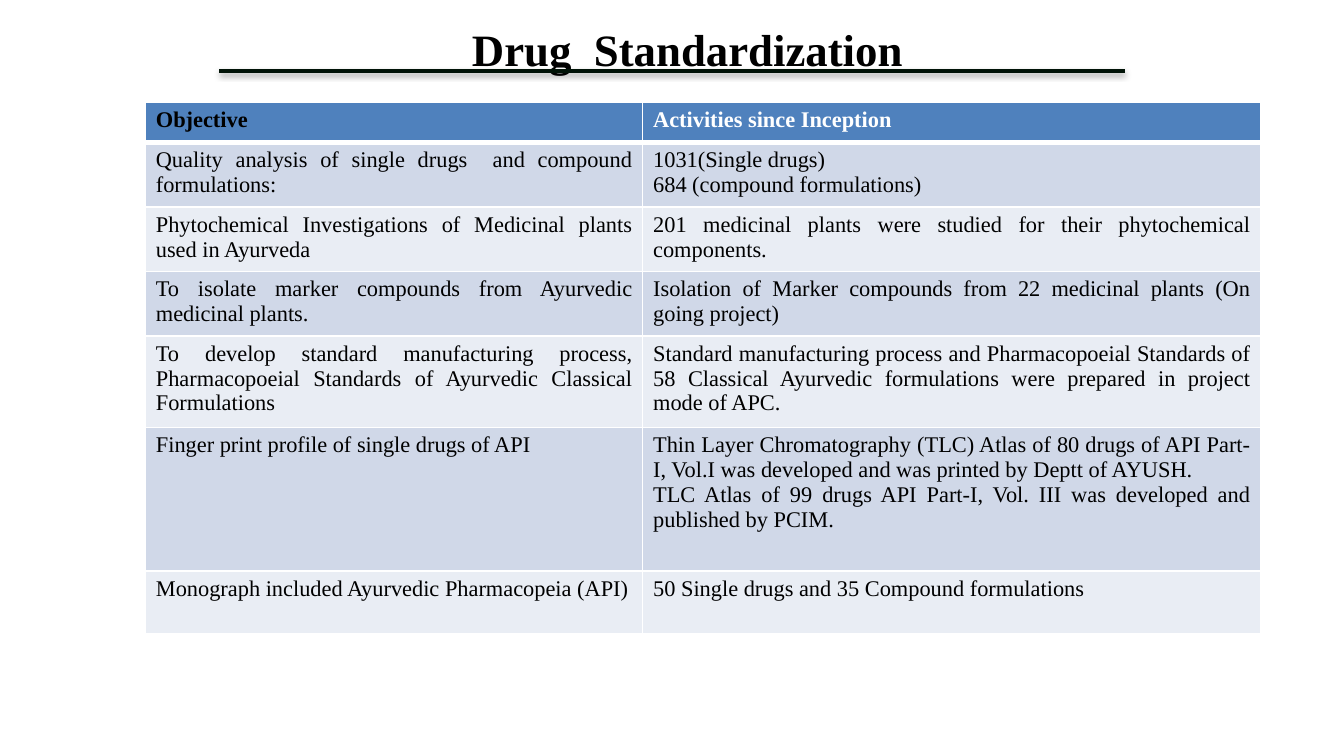
from pptx import Presentation
from pptx.dml.color import RGBColor
from pptx.enum.shapes import MSO_CONNECTOR as Connector
from pptx.enum.text import MSO_ANCHOR as Anchor, PP_ALIGN as Align
from pptx.oxml import parse_xml
from pptx.oxml.ns import nsdecls
from pptx.util import Inches, Pt

BLACK = RGBColor(0x00, 0x00, 0x00)
WHITE = RGBColor(0xFF, 0xFF, 0xFF)
RULE = RGBColor(0x01, 0x13, 0x07)
HEADER = RGBColor(0x4F, 0x81, 0xBD)
BANDS = [RGBColor(0xD0, 0xD8, 0xE8), RGBColor(0xE9, 0xED, 0xF4)]
FONT = "Times New Roman"

TITLE = "Drug  Standardization "
HEADINGS = [("Objective", BLACK), ("Activities since Inception", WHITE)]
COLUMN_WIDTHS = [3.7, 4.6]
HEADER_HEIGHT = 0.3
# Row height, objective, activity paragraphs
ROWS = [
    (0.47, "Quality analysis of single drugs  and compound formulations:",
     ["1031(Single drugs)", "684 (compound formulations)"]),
    (0.48, "Phytochemical Investigations of Medicinal plants used in Ayurveda",
     ["201 medicinal plants were studied for their phytochemical components. "]),
    (0.47, "To isolate marker compounds from Ayurvedic medicinal plants.",
     ["Isolation of Marker compounds from 22 medicinal plants (On going project) "]),
    (0.68, "To develop standard manufacturing process, Pharmacopoeial Standards "
           "of Ayurvedic Classical Formulations",
     ["Standard manufacturing process and Pharmacopoeial Standards of 58 Classical "
      "Ayurvedic formulations were prepared in project mode of APC."]),
    (1.07, "Finger print profile of single drugs of API",
     ["Thin Layer Chromatography (TLC) Atlas of 80 drugs of API Part-I, Vol.I was "
      "developed and was printed by Deptt of AYUSH.",
      "TLC Atlas of 99 drugs API Part-I, Vol. III was developed and published by PCIM."]),
    (0.47, "Monograph included Ayurvedic Pharmacopeia (API)",
     ["50 Single drugs and 35 Compound formulations"]),
]


def write(frame, lines, size, color, bold, align):
    for index, line in enumerate(lines):
        para = frame.paragraphs[0] if index == 0 else frame.add_paragraph()
        para.alignment = align
        span = para.add_run()
        span.text = line
        span.font.name = FONT
        span.font.size = Pt(size)
        span.font.bold = bold
        span.font.color.rgb = color


def add_borders(cell, top, bottom):
    """Draw white cell edges; top and bottom are widths in points."""
    for side, width in (("L", 1), ("R", 1), ("T", top), ("B", bottom)):
        cell._tc.get_or_add_tcPr().append(parse_xml(
            f'<a:ln{side} {nsdecls("a")} w="{Pt(width)}"><a:solidFill>'
            f'<a:srgbClr val="{WHITE}"/></a:solidFill></a:ln{side}>'))


def fill_cell(cell, lines, fill, color=BLACK, bold=False, align=Align.JUSTIFY,
              top=1, bottom=1):
    add_borders(cell, top, bottom)
    cell.fill.solid()
    cell.fill.fore_color.rgb = fill
    cell.margin_left, cell.margin_right = Inches(0.08), Inches(0.07)
    cell.margin_top = cell.margin_bottom = Inches(0.04)
    write(cell.text_frame, lines, 12, color, bold, align)


def add_title(page):
    box = page.shapes.add_textbox(Inches(1.78), Inches(-0.18), Inches(6.75), Inches(0.88))
    frame = box.text_frame
    frame.word_wrap = True
    frame.vertical_anchor = Anchor.MIDDLE
    write(frame, [TITLE], 24, BLACK, True, Align.CENTER)
    frame.paragraphs[0].line_spacing = 1.5

    rule = page.shapes.add_connector(
        Connector.STRAIGHT, Inches(1.63), Inches(0.53), Inches(8.37), Inches(0.53))
    rule.line.color.rgb = RULE
    rule.line.width = Pt(2)
    rule._element.spPr.append(parse_xml(
        f'<a:effectLst {nsdecls("a")}><a:outerShdw blurRad="{Pt(3.1)}" dist="{Pt(1.6)}" '
        f'dir="5400000" rotWithShape="0"><a:srgbClr val="{BLACK}">'
        '<a:alpha val="38000"/></a:srgbClr></a:outerShdw></a:effectLst>'))


def add_activity_table(page):
    heights = [HEADER_HEIGHT] + [row[0] for row in ROWS]
    table = page.shapes.add_table(
        len(heights), len(COLUMN_WIDTHS), Inches(1.08), Inches(0.76),
        Inches(sum(COLUMN_WIDTHS)), Inches(sum(heights))).table
    for column, width in zip(table.columns, COLUMN_WIDTHS):
        column.width = Inches(width)
    for row, height in zip(table.rows, heights):
        row.height = Inches(height)

    for column, (heading, color) in enumerate(HEADINGS):
        fill_cell(table.cell(0, column), [heading], HEADER, color, True, Align.LEFT, bottom=3)
    for number, (_, objective, activities) in enumerate(ROWS, 1):
        for column, lines in enumerate(([objective], activities)):
            fill_cell(table.cell(number, column), lines, BANDS[(number - 1) % 2],
                      top=3 if number == 1 else 1)


def main():
    deck = Presentation()
    deck.slide_width = Inches(10)
    deck.slide_height = Inches(10 * 9 / 16)
    page = deck.slides.add_slide(deck.slide_layouts[6])
    add_title(page)
    add_activity_table(page)
    deck.save("out.pptx")


if __name__ == "__main__":
    main()
